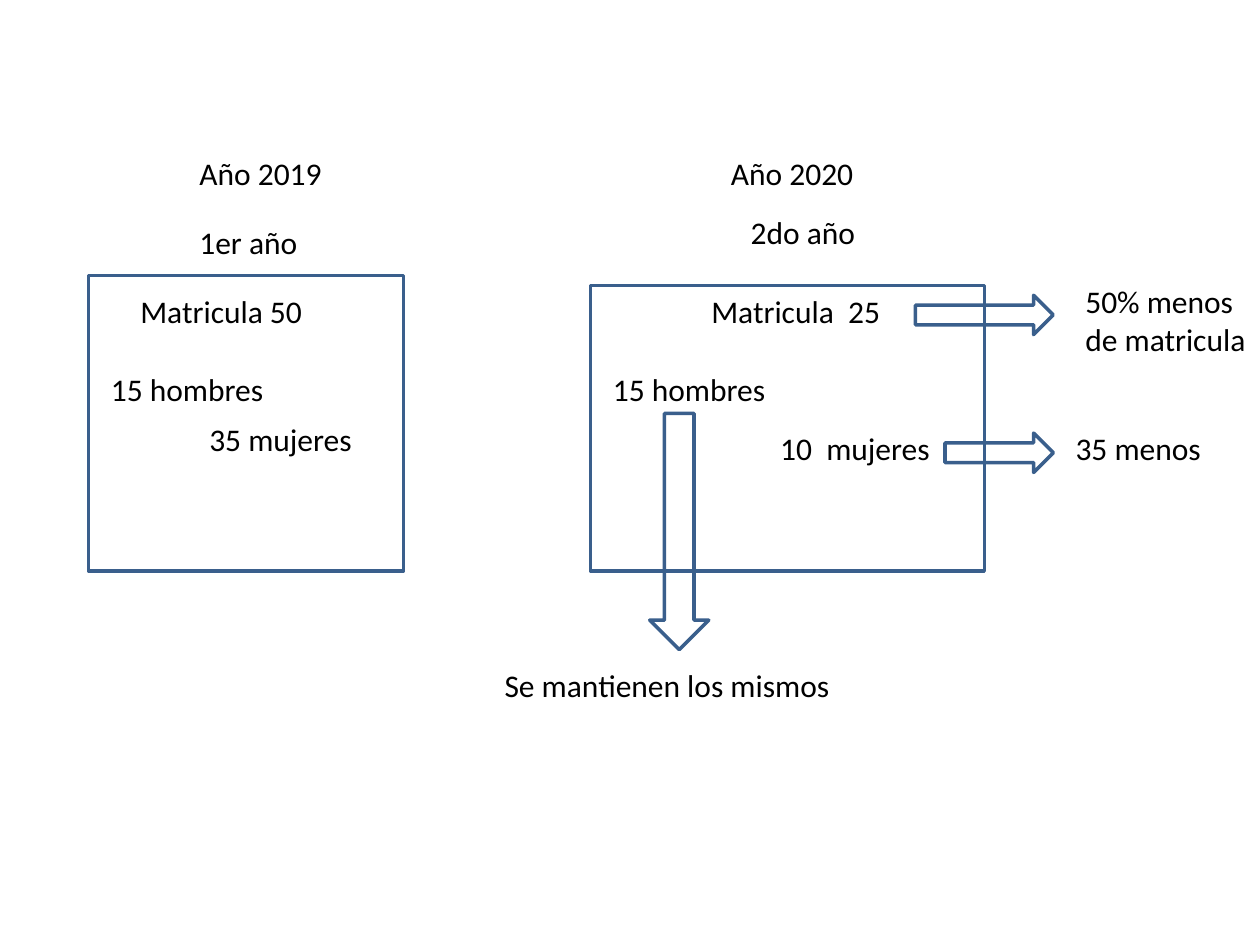
from pptx import Presentation
from pptx import util as u
from pptx.dml.color import RGBColor
from pptx.enum import shapes, text

COLORS = {"line": "3A5F8C", "text": "000000"}
FONT = {"name": "Calibri", "size": u.Pt(18)}
COLS = 128  # square grid cells across the slide
ROW = 5     # cells high for one line of text

# All places are in grid cells: left, top, width, height
FORMS = [
    ("RECTANGLE", 9, 28, 32, 30),
    ("RECTANGLE", 60, 29, 40, 29),
    ("RIGHT_ARROW", 93, 30, 14, 4),
    ("RIGHT_ARROW", 96, 44, 11, 4),
    ("DOWN_ARROW", 66, 42, 6, 24),
]

# Words, left, top, width
LABELS = [
    ("Año 2019", 19, 15, 17),
    ("1er año", 19, 22, 13),
    ("Matricula 50", 13, 29, 23),
    ("15 hombres", 10, 37, 20),
    ("35 mujeres", 20, 42, 21),
    ("Año 2020", 73, 15, 17),
    ("2do año", 75, 21, 14),
    ("Matricula  25", 71, 29, 20),
    ("15 hombres", 61, 37, 19),
    ("10  mujeres", 78, 43, 20),
    ("50% menos de matricula", 109, 28, 19),
    ("35 menos", 108, 43, 16),
    ("Se mantienen los mismos", 50, 67, 36),
]

deck = Presentation()
deck.slide_width, deck.slide_height = u.Inches(10), u.Inches(7.5)
slide = deck.slides.add_slide(deck.slide_layouts[6])
cell = deck.slide_width / COLS


def place(*cells):
    return [round(n * cell) for n in cells]


for kind, *box in FORMS:
    form = slide.shapes.add_shape(getattr(shapes.MSO_SHAPE, kind), *place(*box))
    form.shadow.inherit = False
    form.fill.background()
    form.line.color.rgb = RGBColor.from_string(COLORS["line"])
    form.line.width = u.Pt(2)

for words, left, top, width in LABELS:
    frame = slide.shapes.add_textbox(*place(left, top, width, ROW)).text_frame
    frame.word_wrap = True
    frame.auto_size = text.MSO_AUTO_SIZE.SHAPE_TO_FIT_TEXT
    frame.text = words
    font = frame.paragraphs[0].runs[0].font
    for key, value in FONT.items():
        setattr(font, key, value)
    font.color.rgb = RGBColor.from_string(COLORS["text"])

deck.save("out.pptx")
